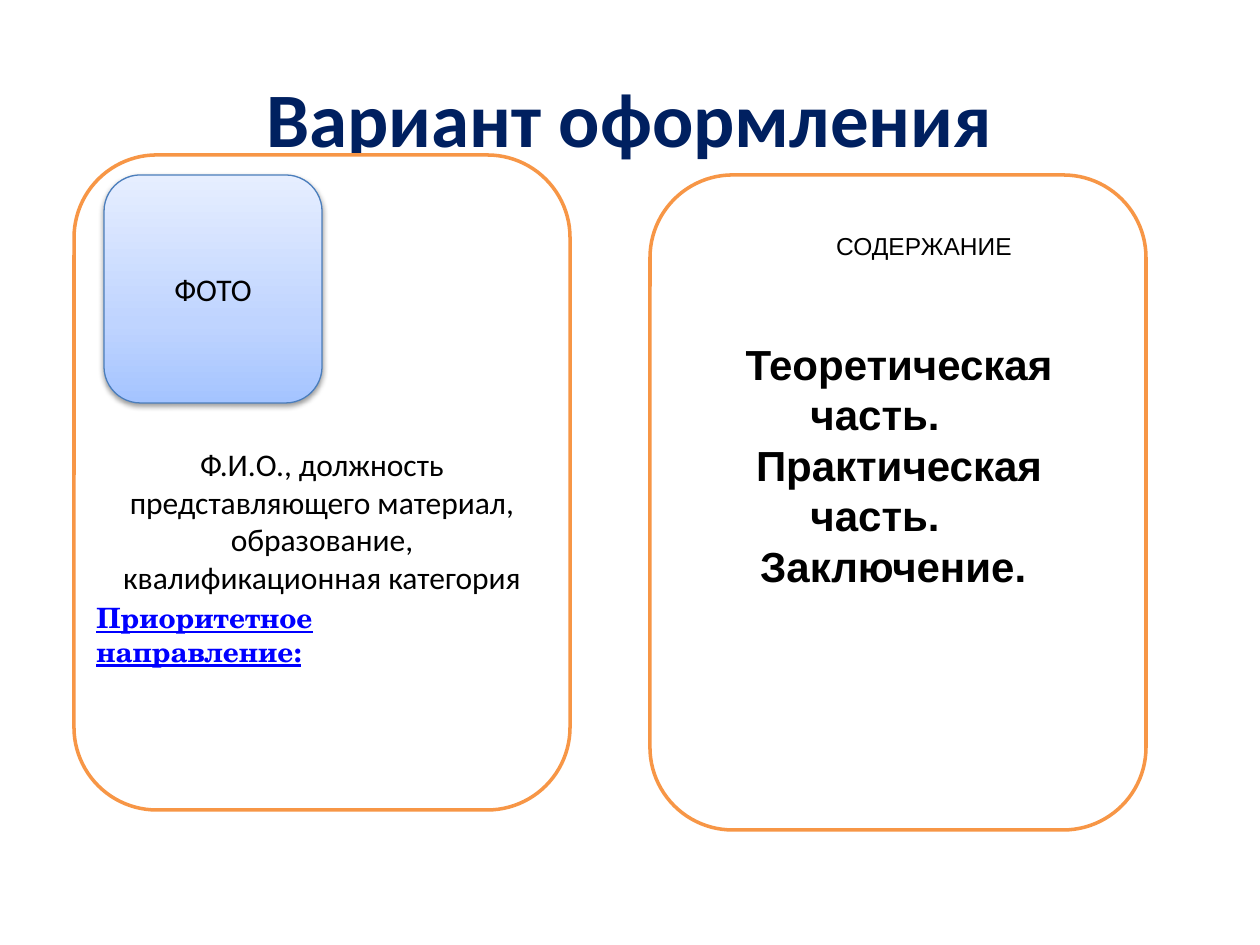
"""Build a portfolio layout slide with an author card and a contents card."""
from dataclasses import dataclass

from lxml import etree
from pptx import Presentation
from pptx.dml.color import RGBColor
from pptx.enum.shapes import MSO_SHAPE
from pptx.enum.text import MSO_ANCHOR, MSO_AUTO_SIZE, PP_ALIGN
from pptx.oxml.ns import qn
from pptx.util import Pt

EMU_PER_PX = 914400 / 126
ROUNDED = MSO_SHAPE.ROUNDED_RECTANGLE
MIDDLE = MSO_ANCHOR.MIDDLE
GROW = MSO_AUTO_SIZE.SHAPE_TO_FIT_TEXT
LEFT, CENTER = PP_ALIGN.LEFT, PP_ALIGN.CENTER
TITLE_ONLY = 5
COLORS = {
    "title": "002060",
    "text": "000000",
    "link": "0000FF",
    "card": "FFFFFF",
    "card_line": "F79646",
    "photo_line": "4B7EBC",
    "shadow": "000000",
}
PHOTO_STOPS = ((0, "A4C4FF"), (35, "BFD4FF"), (100, "E6EEFF"))


@dataclass(frozen=True)
class Box:
    left: int
    top: int
    width: int
    height: int


@dataclass(frozen=True)
class Style:
    size: int
    font: str
    color: str = "text"
    bold: bool = False
    underline: bool = False
    align: PP_ALIGN = CENTER
    indent: int = 0


@dataclass(frozen=True)
class Label:
    box: Box
    lines: tuple[str, ...]
    style: Style


BODY = Style(18, "Calibri")
TITLE = Style(44, "Calibri", "title", bold=True)
TITLE_BOX = Box(63, 38, 1134, 157)
AUTHOR_CARD = Box(74, 155, 496, 655)
PHOTO = Box(104, 175, 218, 228)
CONTENTS_CARD = Box(650, 175, 496, 655)
AUTHOR_TEXT = "Ф.И.О., должность представляющего материал, образование, квалификационная категория"
AUTHOR_TOP_INSET = 82
LABELS = (
    Label(Box(84, 611, 432, 47), ("Приоритетное направление:",),
          Style(16, "TeX Gyre Schola", "link", True, True, LEFT)),
    Label(Box(669, 331, 412, 267),
          ("Теоретическая часть.", "Практическая часть.", "Заключение. "),
          Style(24, "Arial", bold=True, indent=48)),
    Label(Box(719, 224, 362, 43), ("СОДЕРЖАНИЕ",), Style(14, "Arial", indent=48)),
)


def px(length: int) -> int:
    return round(length * EMU_PER_PX)


def place(box: Box) -> tuple[int, ...]:
    return tuple(px(value) for value in (box.left, box.top, box.width, box.height))


def rgb(name: str) -> RGBColor:
    return RGBColor.from_string(COLORS[name])


def add_element(parent, tag: str, **attributes):
    return etree.SubElement(parent, qn(tag), {key: str(value) for key, value in attributes.items()})


def write(shape, lines: tuple[str, ...], style: Style) -> None:
    frame = shape.text_frame
    frame.word_wrap = True
    frame.vertical_anchor = MIDDLE
    for index, line in enumerate(lines):
        paragraph = frame.add_paragraph() if index else frame.paragraphs[0]
        paragraph.alignment = style.align
        if style.indent:
            properties = paragraph._p.get_or_add_pPr()
            properties.set("marL", "0")
            properties.set("indent", str(px(style.indent)))
        run = paragraph.add_run()
        run.text = line
        font = run.font
        font.size = Pt(style.size)
        font.name = style.font
        font.bold = style.bold
        font.underline = style.underline
        font.color.rgb = rgb(style.color)


def add_rounded(slide, box: Box, line: str, line_width: float):
    shape = slide.shapes.add_shape(ROUNDED, *place(box))
    shape.shadow.inherit = False
    shape.line.color.rgb = rgb(line)
    shape.line.width = Pt(line_width)
    return shape


def add_card(slide, box: Box):
    shape = add_rounded(slide, box, "card_line", 2)
    shape.fill.solid()
    shape.fill.fore_color.rgb = rgb("card")
    return shape


def add_photo(slide) -> None:
    shape = add_rounded(slide, PHOTO, "photo_line", 0.75)
    shape.fill.gradient()
    shape.fill.gradient_angle = 90
    properties = shape._element.spPr
    stops = properties.find(".//" + qn("a:gsLst"))
    for stop in list(stops):
        stops.remove(stop)
    for position, color in PHOTO_STOPS:
        stop = add_element(stops, "a:gs", pos=position * 1000)
        add_element(stop, "a:srgbClr", val=color)
    shadow = add_element(properties.find(qn("a:effectLst")), "a:outerShdw",
                         blurRad=Pt(3.1), dist=Pt(1.6), dir=5400000, rotWithShape=0)
    color = add_element(shadow, "a:srgbClr", val=COLORS["shadow"])
    add_element(color, "a:alpha", val=38000)
    write(shape, ("ФОТО",), BODY)


def add_label(slide, label: Label) -> None:
    shape = slide.shapes.add_textbox(*place(label.box))
    write(shape, label.lines, label.style)
    shape.text_frame.auto_size = GROW


def main() -> None:
    presentation = Presentation()
    presentation.slide_width, presentation.slide_height = px(1260), px(945)
    slide = presentation.slides.add_slide(presentation.slide_layouts[TITLE_ONLY])
    title = slide.shapes.title
    title.left, title.top, title.width, title.height = place(TITLE_BOX)
    write(title, ("Вариант оформления",), TITLE)
    author_card = add_card(slide, AUTHOR_CARD)
    author_card.text_frame.margin_top = px(AUTHOR_TOP_INSET)
    write(author_card, (AUTHOR_TEXT,), BODY)
    add_photo(slide)
    add_card(slide, CONTENTS_CARD)
    for label in LABELS:
        add_label(slide, label)
    presentation.save("out.pptx")


if __name__ == "__main__":
    main()
